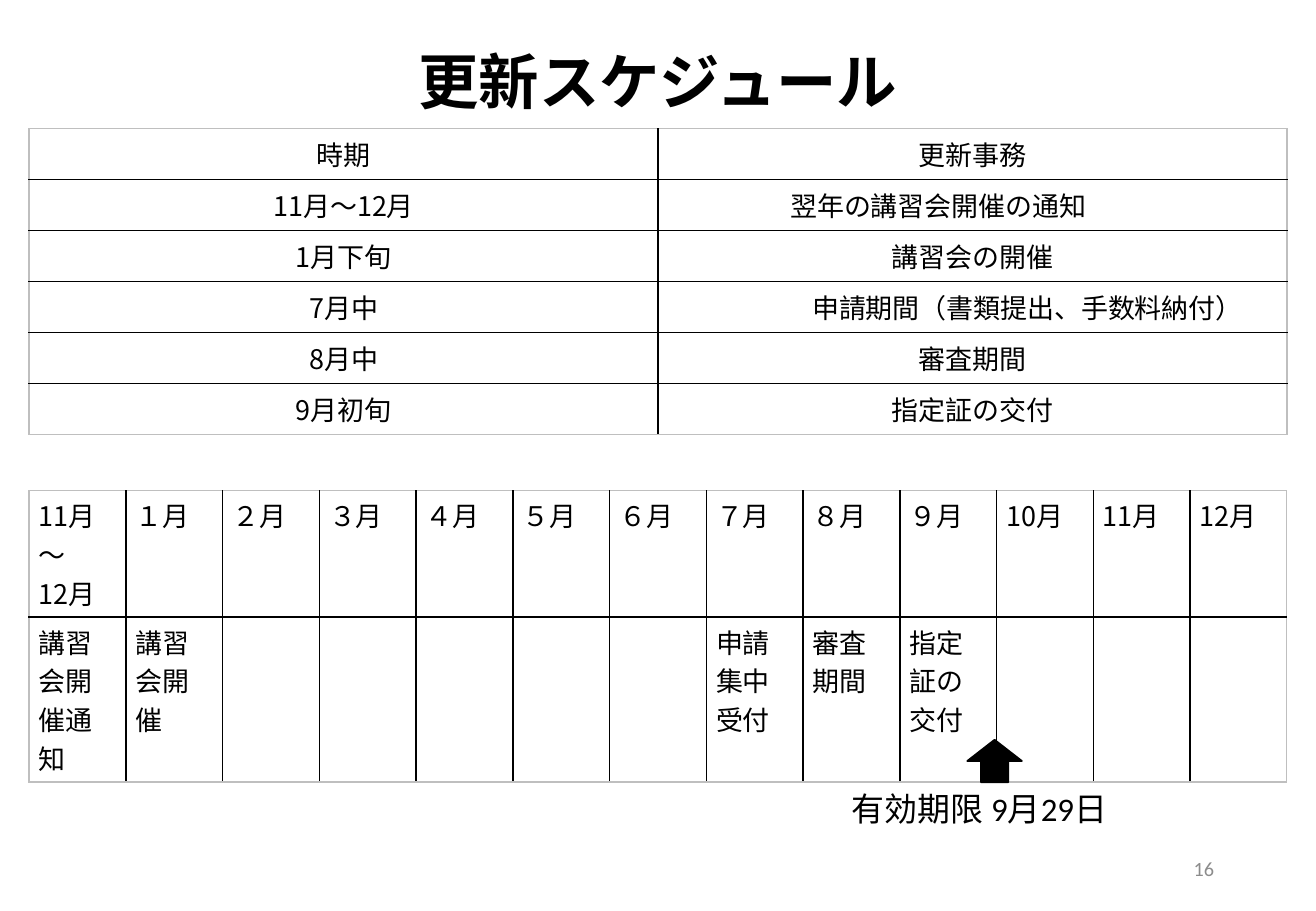
from lxml import etree
from pptx import Presentation
from pptx.dml.color import RGBColor
from pptx.enum import shapes, text
from pptx.oxml.ns import qn
from pptx.util import Inches, Pt

JAPANESE = "Noto Sans CJK JP"
LATIN = "Calibri"
BLACK, GRAY, EDGE = "000000", "8C8C8C", "BFBFBF"
LEFT, WIDTH = 0.24, 10.35

TASKS = [
    ["時期", "更新事務"],
    ["11月～12月", "翌年の講習会開催の通知"],
    ["1月下旬", "講習会の開催"],
    ["7月中", "申請期間（書類提出、手数料納付）"],
    ["8月中", "審査期間"],
    ["9月初旬", "指定証の交付"],
]
NOTICE_MONTHS = "11月\v～\n12月"
MONTHS = [NOTICE_MONTHS, "１月", "２月", "３月", "４月", "５月", "６月",
          "７月", "８月", "９月", "10月", "11月", "12月"]
EVENTS = {NOTICE_MONTHS: "講習会開催通知", "１月": "講習会開催",
          "７月": "申請集中受付", "８月": "審査期間", "９月": "指定証の交付"}


def rgb(value):
    """Turn a hex string into a colour."""
    return RGBColor.from_string(value)


def style_text(tf, size, font=JAPANESE, color=BLACK, bold=False,
               align=text.PP_ALIGN.LEFT):
    """Apply one font and alignment to every paragraph of a text frame."""
    for p in tf.paragraphs:
        p.alignment = align
        p.font.size = Pt(size)
        p.font.name = font
        p.font.bold = bold
        p.font.color.rgb = rgb(color)
        east_asian = etree.SubElement(p.font._element, qn("a:ea"))
        east_asian.set("typeface", JAPANESE)


def add_text(slide, box, content, size, anchor=text.MSO_ANCHOR.TOP, **style):
    """Add a wrapping text box and return its text frame."""
    tf = slide.shapes.add_textbox(*map(Inches, box)).text_frame
    tf.word_wrap = True
    tf.vertical_anchor = anchor
    tf.text = content
    style_text(tf, size, **style)
    return tf


def set_borders(cell, colors):
    """Draw the left, right, top and bottom borders of a cell."""
    tc_pr = cell._tc.get_or_add_tcPr()
    for i, (side, color) in enumerate(zip("LRTB", colors)):
        ln = etree.Element(qn(f"a:ln{side}"), w=str(Pt(1)))
        fill = etree.SubElement(ln, qn("a:solidFill"))
        etree.SubElement(fill, qn("a:srgbClr"), val=color)
        tc_pr.insert(i, ln)


def add_schedule(slide, top, rows, heights, align, anchor):
    """Add a ruled table with equal columns and return it."""
    n_rows, n_cols = len(rows), len(rows[0])
    frame = slide.shapes.add_table(n_rows, n_cols, Inches(LEFT), Inches(top),
                                   Inches(WIDTH), Inches(sum(heights)))
    table = frame.table
    table.first_row = table.horz_banding = False
    for column in table.columns:
        column.width = Inches(WIDTH / n_cols)
    for i, (row, height) in enumerate(zip(rows, heights)):
        table.rows[i].height = Inches(height)
        for j, content in enumerate(row):
            cell = table.cell(i, j)
            cell.text = content
            cell.vertical_anchor = anchor
            cell.margin_left = cell.margin_right = Inches(0.08)
            cell.margin_top = cell.margin_bottom = Inches(0.04)
            cell.fill.background()
            style_text(cell.text_frame, 16, align=align)
            outer = (j == 0, j == n_cols - 1, i == 0, i == n_rows - 1)
            set_borders(cell, [EDGE if o else BLACK for o in outer])
    return table


def add_deadline_arrow(slide):
    """Add the arrow that points to the expiry date."""
    box = map(Inches, (7.96, 6.09, 0.45, 0.35))
    sp = slide.shapes.add_shape(shapes.MSO_SHAPE.UP_ARROW, *box)
    sp.shadow.inherit = False
    sp.fill.solid()
    sp.fill.fore_color.rgb = rgb(BLACK)
    sp.line.color.rgb = rgb(BLACK)
    sp.line.width = Pt(1)


def main():
    """Build the renewal schedule slide."""
    prs = Presentation()
    prs.slide_width, prs.slide_height = Inches(10.83), Inches(7.5)
    slide = prs.slides.add_slide(prs.slide_layouts[6])
    middle = text.MSO_ANCHOR.MIDDLE
    center = text.PP_ALIGN.CENTER

    title = add_text(slide, (0, 0.11, 10.83, 1.18), "更新スケジュール", 35.8,
                     middle, bold=True, align=center)
    title.paragraphs[0].line_spacing = 0.9
    tasks = add_schedule(slide, 1.06, TASKS, [0.42] * len(TASKS), center,
                         middle)
    tasks.cell(1, 1).margin_right = Inches(0.64)
    tasks.cell(3, 1).margin_left = Inches(0.99)
    calendar = [MONTHS, [EVENTS.get(month, "") for month in MONTHS]]
    add_schedule(slide, 4.04, calendar, [1.04, 1.36], text.PP_ALIGN.LEFT,
                 text.MSO_ANCHOR.TOP)
    add_deadline_arrow(slide)
    add_text(slide, (6.91, 6.44, 3, 0.43), "有効期限 9月29日", 19.5, font=LATIN)
    add_text(slide, (7.65, 6.95, 2.44, 0.4), "16", 12, middle, font=LATIN,
             color=GRAY, align=text.PP_ALIGN.RIGHT)
    prs.save("out.pptx")


if __name__ == "__main__":
    main()
